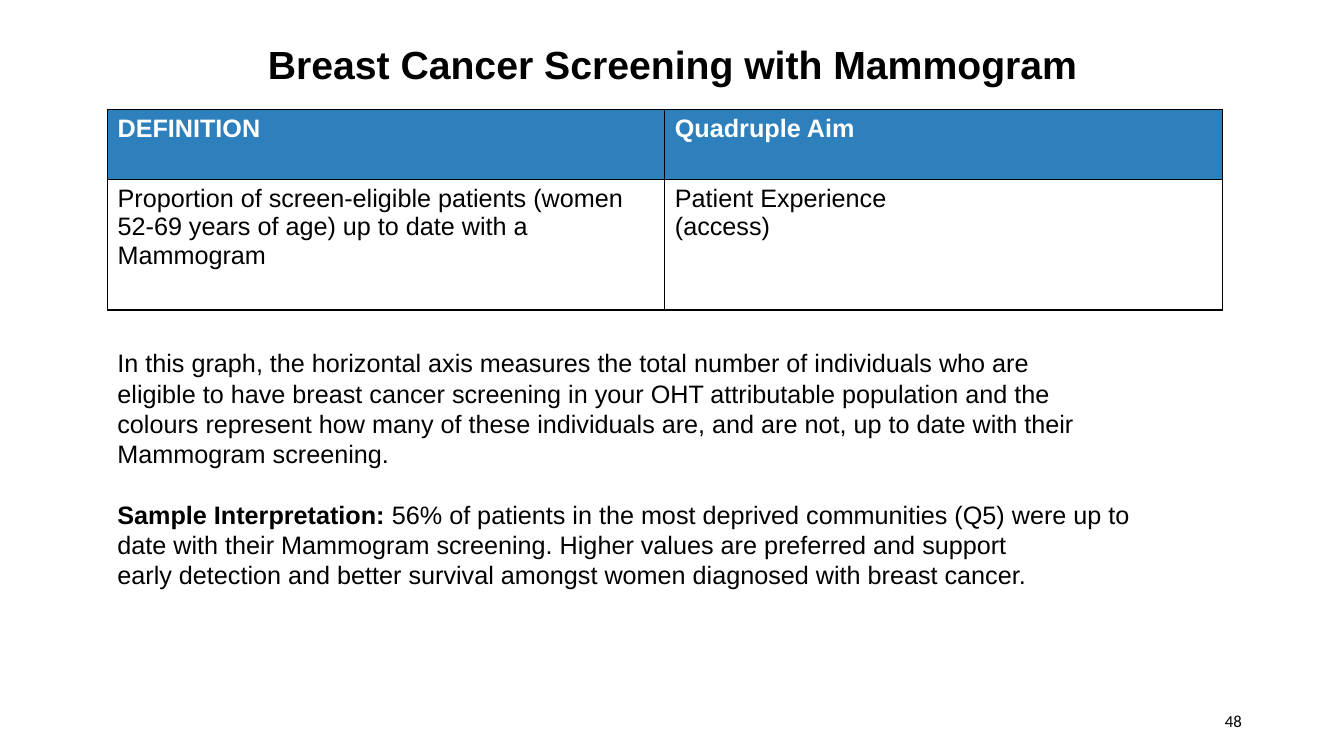
"""Build the breast cancer screening definition slide."""
from dataclasses import dataclass

from lxml import etree
from pptx import Presentation
from pptx.dml.color import RGBColor
from pptx.enum.text import MSO_ANCHOR, PP_ALIGN
from pptx.oxml.ns import qn
from pptx.util import Cm, Pt

LEFT, CENTER, RIGHT = PP_ALIGN.LEFT, PP_ALIGN.CENTER, PP_ALIGN.RIGHT
TOP, MIDDLE = MSO_ANCHOR.TOP, MSO_ANCHOR.MIDDLE
COLORS = {"black": "000000", "white": "FFFFFF", "header": "2E80BC"}
MARGIN = 2.71
TABLE_WIDTH = 28.09
ROW_HEIGHTS = (1.77, 3.28)
BORDER_SIDES = ("a:lnL", "a:lnR", "a:lnT", "a:lnB")
HARD_SPACE = chr(160)


@dataclass
class Span:
    text: str
    bold: bool = False


@dataclass
class TextBlock:
    left: float
    top: float
    width: float
    height: float
    paragraphs: list[list[Span]]
    size: float = 18
    font: str = "Arial"
    align: PP_ALIGN = LEFT
    anchor: MSO_ANCHOR = TOP
    line_spacing: float = 1.0
    gap: float = 0


TABLE_ROWS = [
    [["DEFINITION"], ["Quadruple Aim"]],
    [
        ["Proportion of screen-eligible patients (women 52-69 years of age) up to date with a Mammogram"],
        ["Patient Experience", "(access)"],
    ],
]
BLOCKS = [
    TextBlock(23.93, 17.65, 7.62, 1.02, [[Span("48")]], size=12, font="Calibri",
              align=RIGHT, anchor=MIDDLE),
    TextBlock(1.96, 0.61, 29.97, 2.13, [[Span("Breast Cancer Screening with Mammogram", bold=True)]],
              size=28, align=CENTER, anchor=MIDDLE, line_spacing=0.9),
    TextBlock(MARGIN, 8.64, 26.21, 7.19, [
        [Span("In this graph, the horizontal axis measures the total number of individuals who are "
              f"eligible{HARD_SPACE}to have breast cancer screening in your OHT attributable "
              f"population and the colours{HARD_SPACE}represent how{HARD_SPACE}many of these "
              f"individuals{HARD_SPACE}are, and{HARD_SPACE}are not, up to date with their "
              "Mammogram screening.")],
        [Span("Sample Interpretation: ", bold=True),
         Span("56% of patients in the most deprived communities (Q5) were up to date with their "
              f"Mammogram screening.{HARD_SPACE}Higher values are preferred and support "
              f"early{HARD_SPACE}detection and better survival amongst women diagnosed with "
              "breast cancer.")],
    ], gap=21.6),
]


def write_text(frame, paragraphs: list[list[Span]], *, size: float = 18, font: str = "Arial",
               color: str = "black", align: PP_ALIGN = LEFT, line_spacing: float = 1.0,
               gap: float = 0) -> None:
    for index, spans in enumerate(paragraphs):
        para = frame.add_paragraph() if index else frame.paragraphs[0]
        para.alignment = align
        para.line_spacing = line_spacing
        para.space_before = Pt(gap if index else 0)
        for span in spans:
            run = para.add_run()
            run.text = span.text
            run.font.name = font
            run.font.size = Pt(size)
            run.font.bold = span.bold
            run.font.color.rgb = RGBColor.from_string(COLORS[color])


def add_text_block(page, block: TextBlock) -> None:
    box = page.shapes.add_textbox(Cm(block.left), Cm(block.top), Cm(block.width), Cm(block.height))
    frame = box.text_frame
    frame.word_wrap = True
    frame.vertical_anchor = block.anchor
    write_text(frame, block.paragraphs, size=block.size, font=block.font, align=block.align,
               line_spacing=block.line_spacing, gap=block.gap)


def add_borders(cell) -> None:
    properties = cell._tc.get_or_add_tcPr()
    for position, side in enumerate(BORDER_SIDES):
        line = etree.Element(qn(side), w=str(Pt(1)))
        fill = etree.SubElement(line, qn("a:solidFill"))
        etree.SubElement(fill, qn("a:srgbClr"), val=COLORS["black"])
        properties.insert(position, line)


def add_definition_table(page) -> None:
    table = page.shapes.add_table(len(TABLE_ROWS), len(TABLE_ROWS[0]), Cm(MARGIN), Cm(2.76),
                                  Cm(TABLE_WIDTH), Cm(sum(ROW_HEIGHTS))).table
    table.horz_banding = False
    for row_index, (height, row) in enumerate(zip(ROW_HEIGHTS, TABLE_ROWS)):
        table.rows[row_index].height = Cm(height)
        is_header = row_index == 0
        for column_index, lines in enumerate(row):
            cell = table.cell(row_index, column_index)
            cell.fill.solid()
            cell.fill.fore_color.rgb = RGBColor.from_string(COLORS["header" if is_header else "white"])
            write_text(cell.text_frame, [[Span(line, bold=is_header)] for line in lines],
                       color="white" if is_header else "black")
            add_borders(cell)


def main() -> None:
    deck = Presentation()
    deck.slide_width, deck.slide_height = Cm(33.87), Cm(19.05)
    page = deck.slides.add_slide(deck.slide_layouts[6])
    for block in BLOCKS:
        add_text_block(page, block)
    add_definition_table(page)
    deck.save("out.pptx")


if __name__ == "__main__":
    main()
